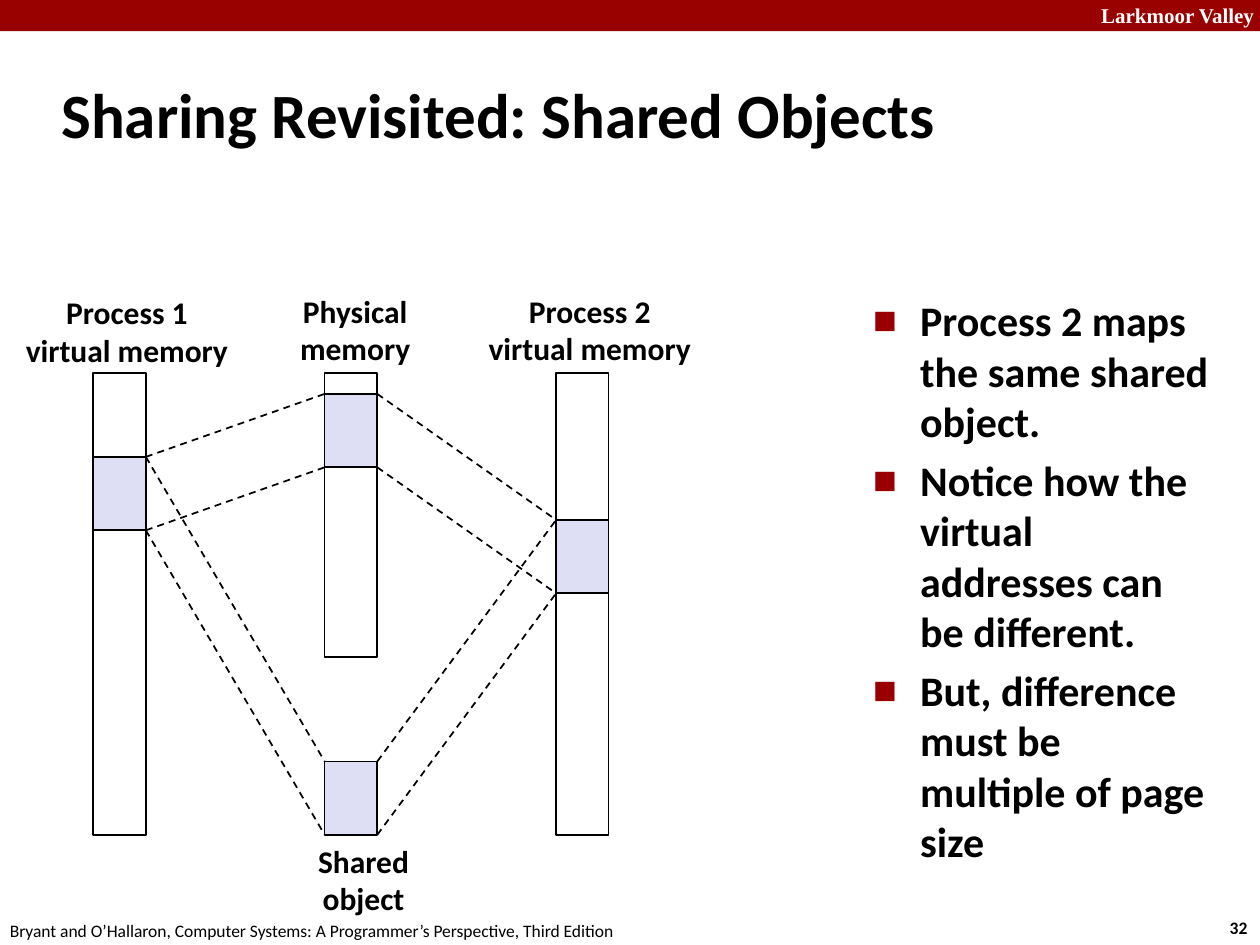
from lxml import etree
from pptx import Presentation, util as u
from pptx.dml.color import RGBColor
from pptx.enum import dml, shapes, text
from pptx.oxml.ns import qn

THEME = {
    "font": "Calibri", "serif": "Times New Roman",
    "ink": "000000", "paper": "FFFFFF", "accent": "990000", "shared": "DEDFF5",
    "title": 36, "body": 24, "label": 18, "brand": 12, "small": 10, "line": 1,
}

TITLE = "Sharing Revisited: Shared Objects"
BRAND = "Larkmoor Valley"
FOOTER = "Bryant and O’Hallaron, Computer Systems: A Programmer’s Perspective, Third Edition"
PAGE = "32"
POINTS = [
    "Process 2 maps the same shared object.",
    "Notice how the virtual addresses can be different.",
    "But, difference must be multiple of page size",
]
# Label lines, label box (left, top, width)
LABELS = [
    (["Shared", "object"], (6.15, 16.83, 2.36)),
    (["Physical", "memory"], (5.79, 5.74, 2.74)),
    (["Process 1", "virtual memory"], (0.25, 5.77, 4.62)),
    (["Process 2", "virtual memory"], (9.58, 5.74, 4.62)),
]
LABEL_H = 1.8

# Diagram grid in cm
BAR_W, BAR_TOP, REGION_H = 1.06, 7.52, 1.48
PROC1_X, MIDDLE_X, PROC2_X = (1.88 + 4.665 * i for i in range(3))
BARS = [(MIDDLE_X, 5.72), (PROC1_X, 9.31), (PROC2_X, 9.31)]
REGIONS = {
    "object": (MIDDLE_X, 15.35),
    "physical": (MIDDLE_X, 7.94),
    "process1": (PROC1_X, 9.21),
    "process2": (PROC2_X, 10.48),
}
MAPPINGS = [("process1", "object"), ("object", "process2"),
            ("process1", "physical"), ("physical", "process2")]


def color(name):
    return RGBColor.from_string(THEME[name])


def add_rect(s, x, y, w, h, fill=None, line=True):
    sp = s.shapes.add_shape(shapes.MSO_SHAPE.RECTANGLE, *map(u.Cm, (x, y, w, h)))
    sp.shadow.inherit = False
    if fill:
        sp.fill.solid()
        sp.fill.fore_color.rgb = color(fill)
    else:
        sp.fill.background()
    if line:
        sp.line.color.rgb = color("ink")
        sp.line.width = u.Pt(THEME["line"])
    else:
        sp.line.fill.background()


def add_text(s, lines, box, size, bold=True, ink="ink", font="font",
             wrap=False, align=text.PP_ALIGN.LEFT, anchor=text.MSO_ANCHOR.TOP):
    tf = s.shapes.add_textbox(*map(u.Cm, box)).text_frame
    tf.word_wrap = wrap
    tf.vertical_anchor = anchor
    for i, line in enumerate(lines):
        p = tf.paragraphs[0] if i == 0 else tf.add_paragraph()
        p.alignment = align
        r = p.add_run()
        r.text = line
        r.font.name = THEME[font]
        r.font.size = u.Pt(THEME[size])
        r.font.bold = bold
        r.font.color.rgb = color(ink)
    return tf


def add_bullet(p, indent=0.95):
    p.space_before = u.Pt(THEME["body"] * 0.2)
    pPr = p._p.get_or_add_pPr()
    pPr.set("marL", str(u.Cm(indent)))
    pPr.set("indent", str(-u.Cm(indent)))
    clr = etree.SubElement(pPr, qn("a:buClr"))
    etree.SubElement(clr, qn("a:srgbClr"), val=THEME["accent"])
    etree.SubElement(pPr, qn("a:buSzPct"), val="60000")
    etree.SubElement(pPr, qn("a:buFont"), typeface=THEME["font"])
    etree.SubElement(pPr, qn("a:buChar"), char="■")


def add_mapping(s, left, right):
    """Join the facing top and bottom corners of two regions with dashed lines."""
    (x1, y1), (x2, y2) = REGIONS[left], REGIONS[right]
    for dy in (0, REGION_H):
        ends = (x1 + BAR_W, y1 + dy, x2, y2 + dy)
        cx = s.shapes.add_connector(shapes.MSO_CONNECTOR.STRAIGHT, *map(u.Cm, ends))
        cx.line.color.rgb = color("ink")
        cx.line.width = u.Pt(THEME["line"])
        cx.line.dash_style = dml.MSO_LINE.DASH
        etree.SubElement(cx._element.spPr, qn("a:effectLst"))


def main():
    prs = Presentation()
    prs.slide_width, prs.slide_height = u.Cm(25.4), u.Cm(19.05)
    s = prs.slides.add_slide(prs.slide_layouts[6])

    add_rect(s, 0, 0, 25.4, 0.63, "accent", line=False)
    add_text(s, [BRAND], (21.95, -0.08, 3.63, 0.76), "brand", ink="paper", font="serif")
    add_text(s, [PAGE], (24.54, 18.36, 0.94, 0.69), "small")
    add_text(s, [FOOTER], (-0.05, 18.42, 12.9, 0.69), "small", bold=False)
    add_text(s, [TITLE], (0.99, 1.22, 21.08, 2.11), "title", wrap=True,
             anchor=text.MSO_ANCHOR.MIDDLE)

    for x, h in BARS:
        add_rect(s, x, BAR_TOP, BAR_W, h)
    for x, y in REGIONS.values():
        add_rect(s, x, y, BAR_W, REGION_H, "shared")
    for left, right in MAPPINGS:
        add_mapping(s, left, right)
    for lines, box in LABELS:
        add_text(s, lines, (*box, LABEL_H), "label", align=text.PP_ALIGN.CENTER,
                 anchor=text.MSO_ANCHOR.MIDDLE)

    tf = add_text(s, POINTS, (17.35, 5.82, 7.37, 12.8), "body", wrap=True)
    for p in tf.paragraphs:
        add_bullet(p)

    prs.save("out.pptx")


if __name__ == "__main__":
    main()
